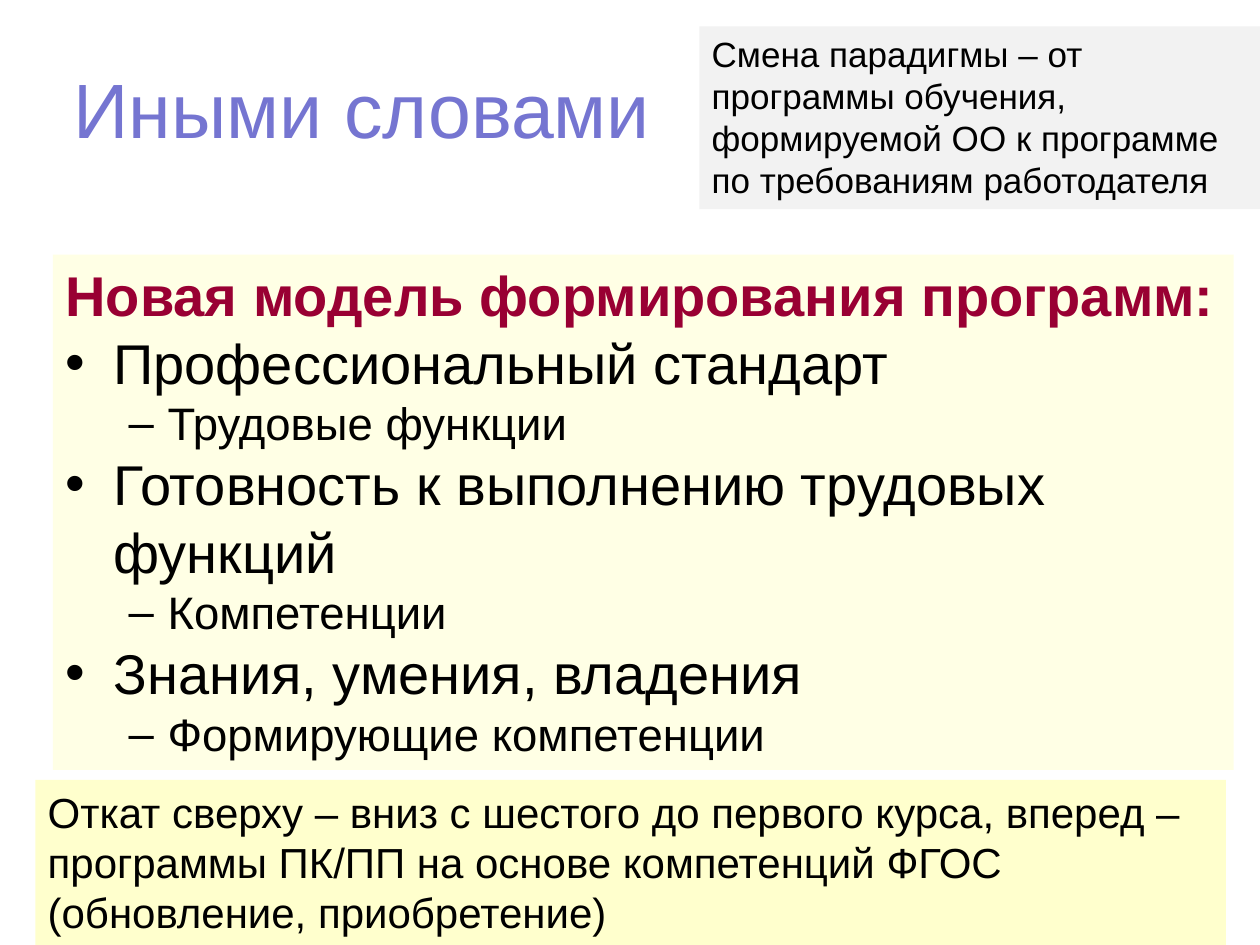
from pptx import Presentation
from pptx.dml.color import RGBColor
from pptx.enum.shapes import MSO_SHAPE as Form
from pptx.enum.text import MSO_ANCHOR as Anchor, MSO_AUTO_SIZE as Fit, PP_ALIGN as Align
from pptx.oxml.ns import qn
from pptx.util import Inches, Pt
from lxml.etree import SubElement

BLACK = RGBColor(0x00, 0x00, 0x00)
VIOLET = RGBColor(0x75, 0x75, 0xD1)
WINE = RGBColor(0x99, 0x00, 0x33)
IVORY = RGBColor(0xFF, 0xFF, 0xE5)
CREAM = RGBColor(0xFF, 0xFF, 0xCD)
GREY = RGBColor(0xF2, 0xF2, 0xF2)

LEVELS = [
    dict(size=32, mark="•", left=0.38, hang=0.38),
    dict(size=26, mark="–", left=0.81, hang=0.31),
]
ITEMS = [
    ("Профессиональный стандарт", "Трудовые функции"),
    ("Готовность к выполнению трудовых функций", "Компетенции"),
    ("Знания, умения, владения", "Формирующие компетенции"),
]


def write(para, text, size=20, color=BLACK, bold=False, align=Align.LEFT,
          mark=None, left=0, hang=0, font="Arial"):
    para.alignment = align
    para.space_before = Pt(0)
    props = para._p.get_or_add_pPr()
    props.set("marL", str(Inches(left)))
    props.set("indent", str(-Inches(hang)))
    if mark:
        SubElement(props, qn("a:buFont"), typeface=font)
        SubElement(props, qn("a:buChar"), char=mark)
    else:
        SubElement(props, qn("a:buNone"))
    run = para.add_run()
    run.text = text
    run.font.name = font
    run.font.size = Pt(size)
    run.font.bold = bold
    run.font.color.rgb = color


class Page:
    def __init__(self, deck):
        self.slide = deck.slides.add_slide(deck.slide_layouts[1])

    def place(self, shape, box, fill=None, anchor=Anchor.TOP):
        shape.left, shape.top, shape.width, shape.height = map(Inches, box)
        if fill is not None:
            shape.fill.solid()
            shape.fill.fore_color.rgb = fill
        frame = shape.text_frame
        frame.word_wrap = True
        frame.auto_size = Fit.NONE
        frame.vertical_anchor = anchor
        return frame

    def title(self, text, box):
        frame = self.place(self.slide.shapes.title, box, anchor=Anchor.MIDDLE)
        write(frame.paragraphs[0], text, size=44, color=VIOLET, align=Align.CENTER)

    def body(self, head, items, box):
        frame = self.place(self.slide.placeholders[1], box, fill=IVORY)
        write(frame.paragraphs[0], head, size=32, color=WINE, bold=True)
        for pair in items:
            for level, text in enumerate(pair):
                para = frame.add_paragraph()
                para.level = level
                write(para, text, **LEVELS[level])

    def note(self, text, box, fill, size):
        shape = self.slide.shapes.add_shape(Form.RECTANGLE, *map(Inches, box))
        shape.shadow.inherit = False
        shape.line.fill.background()
        frame = self.place(shape, box, fill=fill)
        write(frame.paragraphs[0], text, size=size)


def main():
    deck = Presentation()
    deck.slide_width, deck.slide_height = Inches(10), Inches(7.5)
    page = Page(deck)
    page.title("Иными словами", (0.2, 0.23, 5.35, 1.25))
    page.body("Новая модель формирования программ:", ITEMS, (0.42, 2.02, 9.37, 4.09))
    page.note("Смена парадигмы – от программы обучения, формируемой ОО "
              "к программе по требованиям работодателя",
              (5.55, 0.21, 4.45, 1.45), GREY, 20)
    page.note("Откат сверху – вниз с шестого до первого курса, вперед – "
              "программы ПК/ПП на основе компетенций ФГОС (обновление, приобретение)",
              (0.28, 6.19, 9.45, 1.31), CREAM, 24)
    deck.save("out.pptx")


if __name__ == "__main__":
    main()
